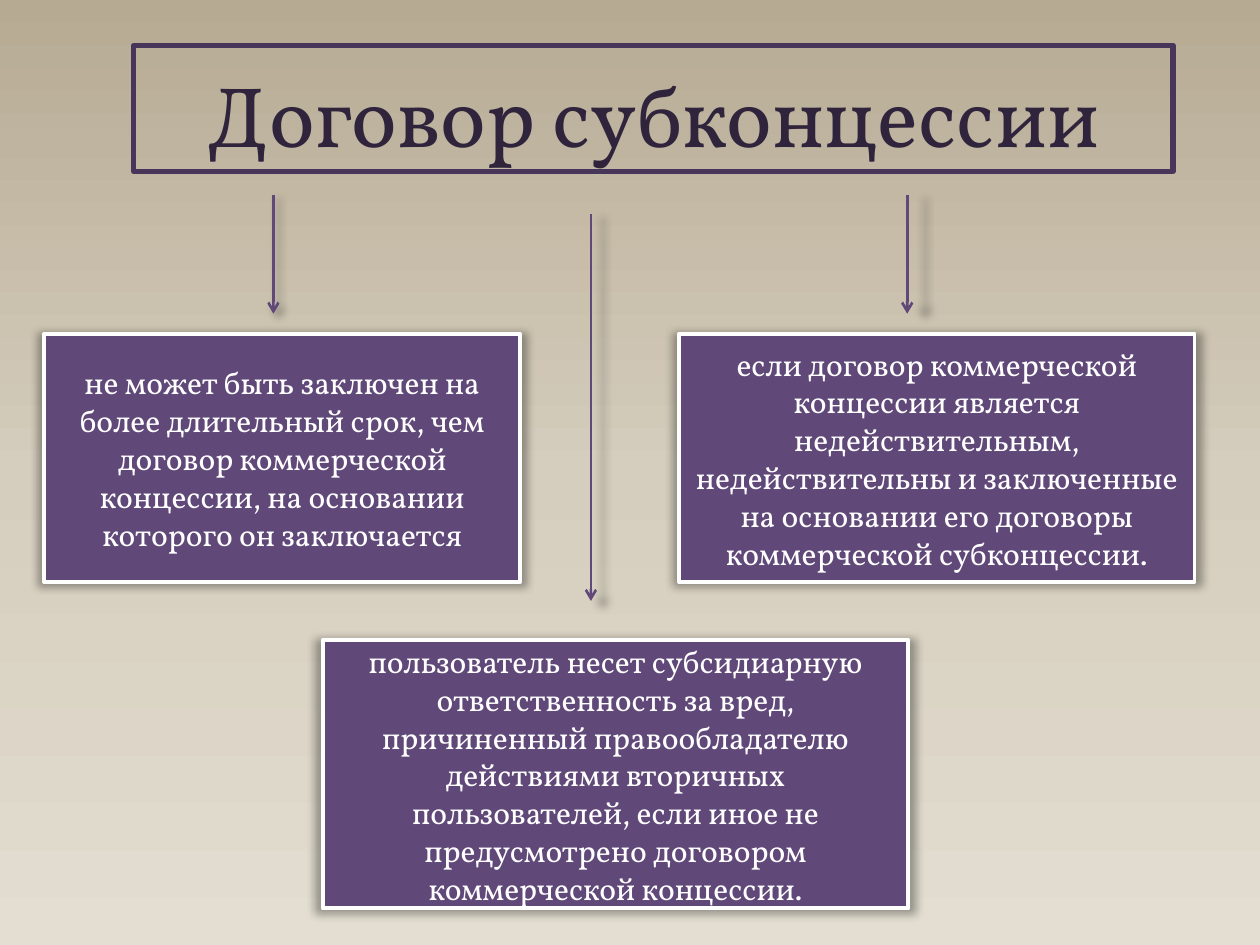
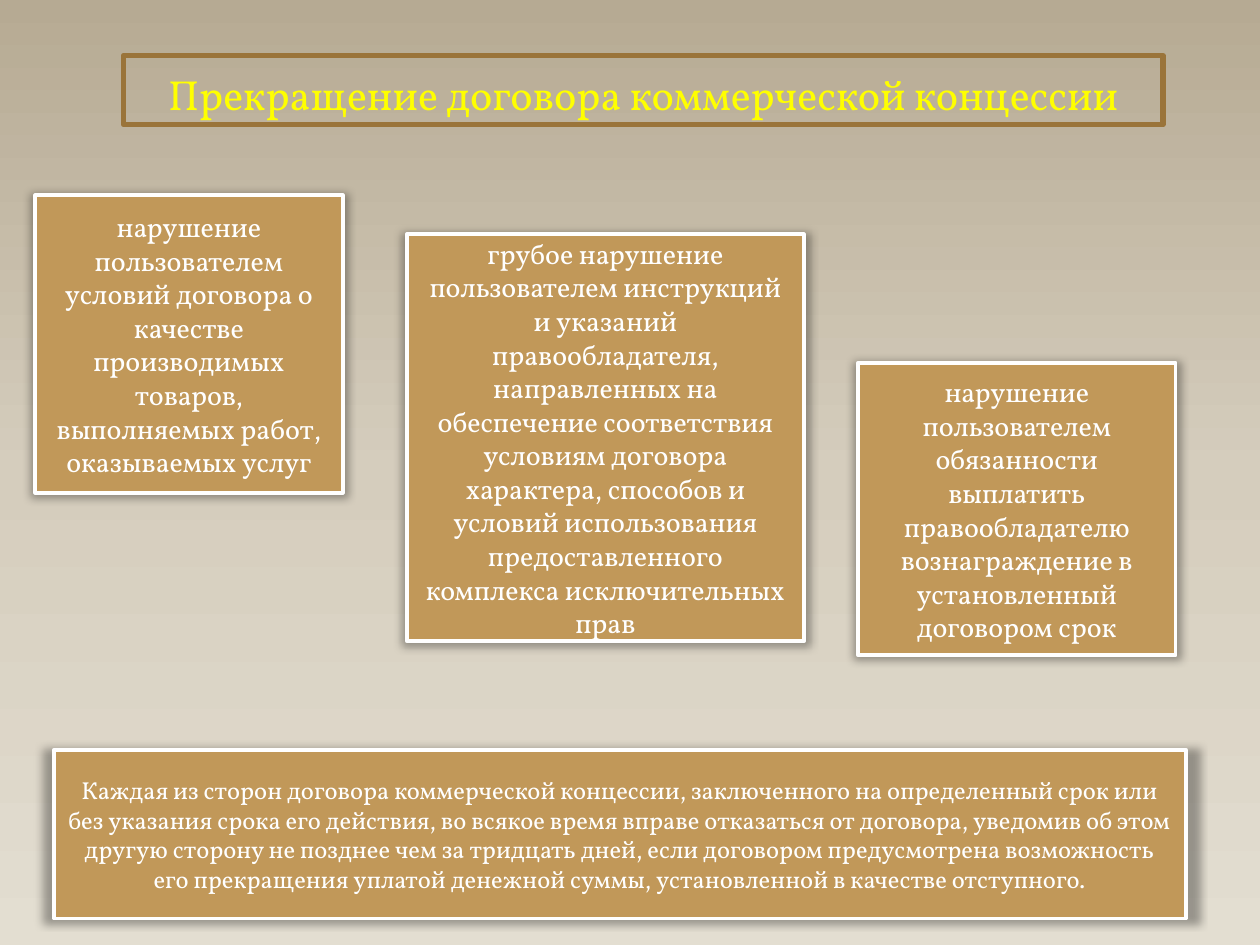
from copy import deepcopy

from lxml.etree import SubElement
from pptx import Presentation
from pptx.dml.color import RGBColor
from pptx.enum.shapes import MSO_CONNECTOR, MSO_SHAPE
from pptx.enum.text import MSO_ANCHOR, MSO_AUTO_SIZE, PP_ALIGN
from pptx.oxml.ns import qn
from pptx.util import Inches, Pt

FONT = "Vollkorn"
HEX = {
    "sky": "B6AA93", "mid": "D5CDBD", "sand": "E3DED1",
    "white": "FFFFFF", "black": "000000", "yellow": "FFFF00",
    "plum": "604878", "plum_edge": "48365A", "plum_ink": "30243C",
    "gold": "C19859", "gold_edge": "9A743A",
}


def color(name):
    return RGBColor.from_string(HEX[name])


def write(shape, text, size=18, ink="white", anchor=MSO_ANCHOR.MIDDLE):
    frame = shape.text_frame
    frame.word_wrap = True
    frame.auto_size = MSO_AUTO_SIZE.NONE
    frame.vertical_anchor = anchor
    para = frame.paragraphs[0]
    para.alignment = PP_ALIGN.CENTER
    run = para.add_run()
    run.text = text
    run.font.name = FONT
    run.font.size = Pt(size)
    run.font.color.rgb = color(ink)


def shade(shape):
    """Give a shape or connector the soft shadow of the theme."""
    props = shape._element.spPr
    for old in props.findall(qn("a:effectLst")):
        props.remove(old)
    effects = SubElement(props, qn("a:effectLst"))
    outer = SubElement(effects, qn("a:outerShdw"), blurRad=str(Pt(5)), dist=str(Pt(1)),
                       dir="5400000", sx="102000", sy="101000", algn="ctr", rotWithShape="0")
    tone = SubElement(outer, qn("a:srgbClr"), val=HEX["black"])
    SubElement(tone, qn("a:alpha"), val="32000")


def paint(master):
    """Fill the master background from dark top to light bottom."""
    fill = master.background.fill
    fill.gradient()
    fill.gradient_angle = 270
    first = fill.gradient_stops[0]._gs
    first.addnext(deepcopy(first))
    for stop, (name, place) in zip(fill.gradient_stops,
                                   [("sky", 0), ("mid", 0.5), ("sand", 1)]):
        stop.color.rgb = color(name)
        stop.position = place


class Deck:
    def __init__(self):
        self.prs = Presentation()
        self.prs.slide_width = Inches(10)
        self.prs.slide_height = Inches(7.5)
        paint(self.prs.slide_master)

    def start(self, tone):
        layout = self.prs.slide_layouts.get_by_name("Title Only")
        self.slide = self.prs.slides.add_slide(layout)
        self.tone = tone

    def title(self, text, left, top, height, size, ink):
        head = self.slide.shapes.title
        head.left, head.top = Inches(left), Inches(top)
        head.width, head.height = Inches(8.25), Inches(height)
        head.line.color.rgb = color(self.tone + "_edge")
        head.line.width = Pt(3)
        write(head, text, size=size, ink=ink, anchor=MSO_ANCHOR.BOTTOM)

    def box(self, text, left, top, width, height, size=18):
        card = self.slide.shapes.add_shape(
            MSO_SHAPE.RECTANGLE, Inches(left), Inches(top), Inches(width), Inches(height))
        card.fill.solid()
        card.fill.fore_color.rgb = color(self.tone)
        card.line.color.rgb = color("white")
        card.line.width = Pt(2.25)
        shade(card)
        write(card, text, size=size)

    def arrow(self, left, top, end):
        line = self.slide.shapes.add_connector(
            MSO_CONNECTOR.STRAIGHT, Inches(left), Inches(top), Inches(left), Inches(end))
        line.line.color.rgb = color(self.tone)
        line.line.width = Pt(1.5)
        SubElement(line.line._get_or_add_ln(), qn("a:tailEnd"), type="arrow")
        shade(line)


def sublease(deck):
    deck.start("plum")
    deck.title("Договор субконцессии", 1.06, 0.36, 1, size=49, ink="plum_ink")
    deck.box("не может быть заключен на более длительный срок, чем договор "
             "коммерческой концессии, на основании которого он заключается",
             0.35, 2.65, 3.78, 1.97)
    deck.box("если договор коммерческой концессии является недействительным, "
             "недействительны и заключенные на основании его договоры "
             "коммерческой субконцессии.", 5.39, 2.65, 4.09, 1.97)
    deck.box("пользователь несет субсидиарную ответственность за вред, причиненный "
             "правообладателю действиями вторичных пользователей, если иное не "
             "предусмотрено договором коммерческой концессии.",
             2.56, 5.08, 4.65, 2.13)
    for left, top, end in [(4.69, 1.7, 4.77), (2.17, 1.55, 2.49), (7.2, 1.55, 2.49)]:
        deck.arrow(left, top, end)


def ending(deck):
    deck.start("gold")
    deck.title("Прекращение договора коммерческой концессии",
               0.98, 0.44, 0.55, size=24, ink="yellow")
    deck.box("нарушение пользователем условий договора о качестве производимых "
             "товаров, выполняемых работ, оказываемых услуг",
             0.28, 1.55, 2.44, 2.36, size=16)
    deck.box("грубое нарушение пользователем инструкций и указаний правообладателя, "
             "направленных на обеспечение соответствия условиям договора характера, "
             "способов и условий использования предоставленного комплекса "
             "исключительных прав", 3.23, 1.86, 3.15, 3.23, size=16)
    deck.box("нарушение пользователем обязанности выплатить правообладателю "
             "вознаграждение в установленный договором срок",
             6.81, 2.88, 2.52, 2.32, size=16)
    deck.box("Каждая из сторон договора коммерческой концессии, заключенного на "
             "определенный срок или без указания срока его действия, во всякое время "
             "вправе отказаться от договора, уведомив об этом другую сторону не "
             "позднее чем за тридцать дней, если договором предусмотрена возможность "
             "его прекращения уплатой денежной суммы, установленной в качестве "
             "отступного.", 0.43, 5.95, 8.98, 1.34, size=14)


def main():
    deck = Deck()
    sublease(deck)
    ending(deck)
    deck.prs.save("out.pptx")


if __name__ == "__main__":
    main()
